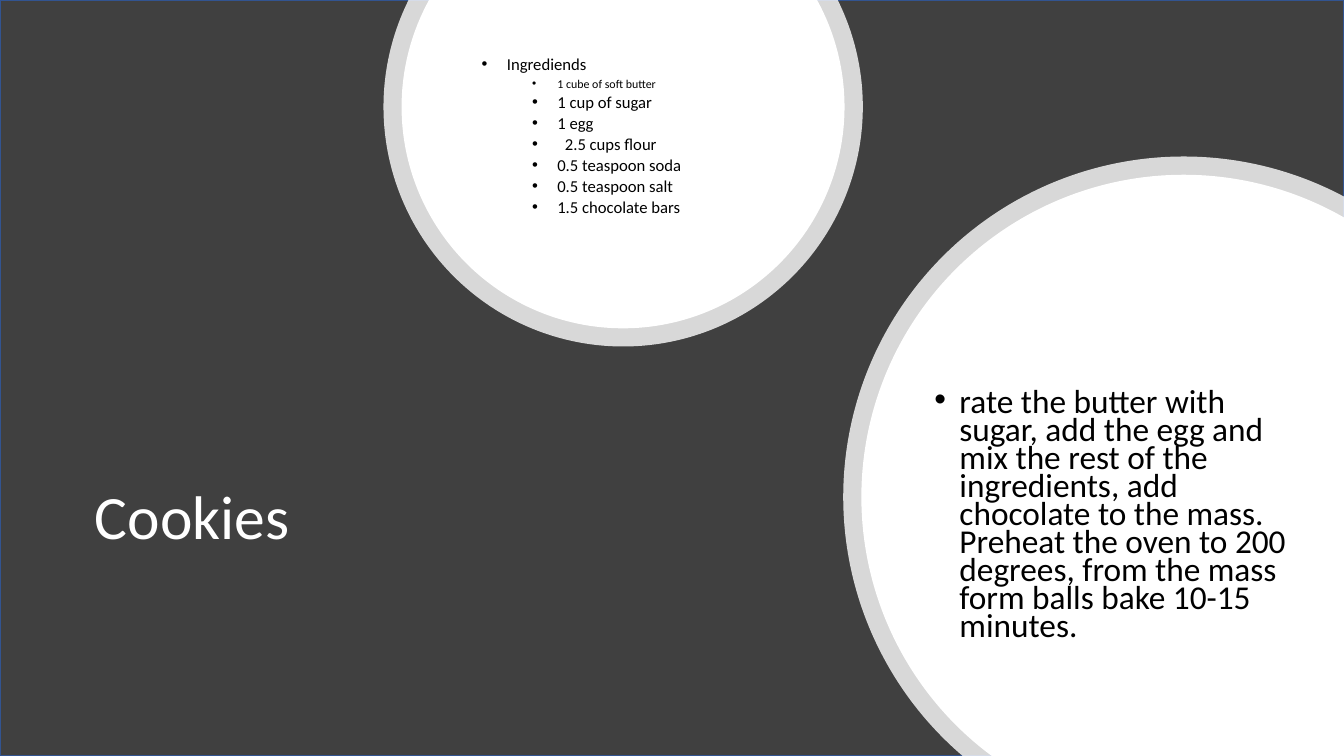
from math import acos, asin, cos, degrees, radians, sin

from lxml.etree import SubElement
from pptx import Presentation
from pptx.dml.color import RGBColor
from pptx.enum.shapes import MSO_SHAPE
from pptx.enum.text import MSO_ANCHOR, PP_ALIGN
from pptx.oxml.ns import qn
from pptx.util import Pt

WIDTH, HEIGHT = 960, 540
RIM = 13  # width of the pale ring round each disc
INGREDIENTS = [
    "1 cube of soft butter",
    "1 cup of sugar",
    "1 egg",
    "2.5 cups flour",
    "0.5 teaspoon soda",
    "0.5 teaspoon salt",
    "1.5 chocolate bars",
]
METHOD = (
    "rate the butter with sugar, add the egg and mix the rest of the "
    "ingredients, add chocolate to the mass. Preheat the oven to 200 "
    "degrees, from the mass form balls bake 10-15 minutes."
)


def color(value):
    return RGBColor.from_string(value)


def place(sp, box):
    sp.left, sp.top, sp.width, sp.height = (Pt(v) for v in box)


def add_text(p, text, size, fill="000000", spacing=0.7, before=0,
             bullet_at=None, hang=18):
    p.alignment = PP_ALIGN.LEFT
    p.line_spacing = spacing
    p.space_before = Pt(before)
    r = p.add_run()
    r.text = text
    r.font.size = Pt(size)
    r.font.name = "Calibri"
    r.font.color.rgb = color(fill)
    if bullet_at is not None:
        pPr = p._p.get_or_add_pPr()
        pPr.set("marL", str(Pt(bullet_at + hang)))
        pPr.set("indent", str(-Pt(hang)))
        SubElement(pPr, qn("a:buFont")).set("typeface", "Arial")
        SubElement(pPr, qn("a:buChar")).set("char", "•")


def add_frame(s, box, inset_top=3.6):
    sp = s.shapes.add_textbox(*(Pt(v) for v in box))
    tf = sp.text_frame
    tf.word_wrap = True
    tf.vertical_anchor = MSO_ANCHOR.MIDDLE
    tf.margin_top = Pt(inset_top)
    return tf


def add_disc(s, cx, cy, radius, opacity=100):
    """Circle cut off by the top edge, or by the right and bottom edges."""
    if cy < radius:
        cut = degrees(asin(cy / radius))
        angles, corners = [-cut, 0, 90, 180, 180 + cut], []
    else:
        start = 180 - degrees(asin((HEIGHT - cy) / radius))
        end = 360 - degrees(acos((WIDTH - cx) / radius))
        angles, corners = [start, 180, 270, end], [(WIDTH, HEIGHT)]
    points = [(cx + radius * cos(radians(a)), cy + radius * sin(radians(a)))
              for a in angles] + corners
    points = [(Pt(x), Pt(y)) for x, y in points]
    builder = s.shapes.build_freeform(*points[0])
    builder.add_line_segments(points[1:], close=True)
    sp = builder.convert_to_shape()

    # Bend the sides between points on the circle into arcs
    sides = list(sp._element.iter(qn("a:lnTo")))
    for side, a, b in zip(sides, angles, angles[1:]):
        arc = SubElement(side.getparent(), qn("a:arcTo"))
        arc.set("wR", str(Pt(radius)))
        arc.set("hR", str(Pt(radius)))
        arc.set("stAng", str(round(a % 360 * 60000)))
        arc.set("swAng", str(round((b - a) * 60000)))
        side.getparent().replace(side, arc)

    sp.shadow.inherit = False
    sp.fill.solid()
    sp.fill.fore_color.rgb = color("FFFFFF")
    sp.line.fill.background()
    if opacity < 100:
        clr = sp._element.spPr.find(qn("a:solidFill"))[0]
        SubElement(clr, qn("a:alpha")).set("val", str(opacity * 1000))


def add_ringed_disc(s, cx, cy, radius):
    add_disc(s, cx, cy, radius, opacity=80)
    add_disc(s, cx, cy, radius - RIM)


def add_background(s, box):
    sp = s.shapes.add_shape(MSO_SHAPE.RECTANGLE, *(Pt(v) for v in box))
    sp.shadow.inherit = False
    sp.fill.solid()
    sp.fill.fore_color.rgb = color("404040")
    sp.line.color.rgb = color("325491")
    sp.line.width = Pt(1)


def add_title(s, box):
    title = s.shapes.title
    place(title, box)
    tf = title.text_frame
    tf.word_wrap = True
    tf.vertical_anchor = MSO_ANCHOR.MIDDLE
    add_text(tf.paragraphs[0], "Cookies", 44, fill="FFFFFF", spacing=0.9)
    # Bring the title in front of the background
    s.shapes._spTree.append(title._element)


def add_ingredients(s, box):
    tf = add_frame(s, box)
    add_text(tf.paragraphs[0], "Ingrediends", 11.9, before=10, bullet_at=0)
    for i, item in enumerate(INGREDIENTS):
        add_text(tf.add_paragraph(), item, 8.5 if i == 0 else 11.9, before=5,
                 bullet_at=36, hang=23.4 if "flour" in item else 18)


def add_method(s, box):
    tf = add_frame(s, box, inset_top=28)
    add_text(tf.paragraphs[0], METHOD, 23.8, before=10, bullet_at=0)


def main():
    prs = Presentation()
    prs.slide_width, prs.slide_height = Pt(WIDTH), Pt(HEIGHT)
    s = prs.slides.add_slide(prs.slide_layouts[5])

    # Dark ground and title
    add_background(s, (0, 0, WIDTH, HEIGHT))
    add_title(s, (60.5, 275.8, 477, 190.8))

    # Ingredients in the upper disc
    add_ringed_disc(s, 445.1, 76.3, 171.2)
    add_ingredients(s, (337, 28, 226.8, 141))

    # Method in the right disc
    add_ringed_disc(s, 845.5, 355, 243.2)
    add_method(s, (660.3, 247.7, 273.6, 218.9))

    prs.save("out.pptx")


if __name__ == "__main__":
    main()
